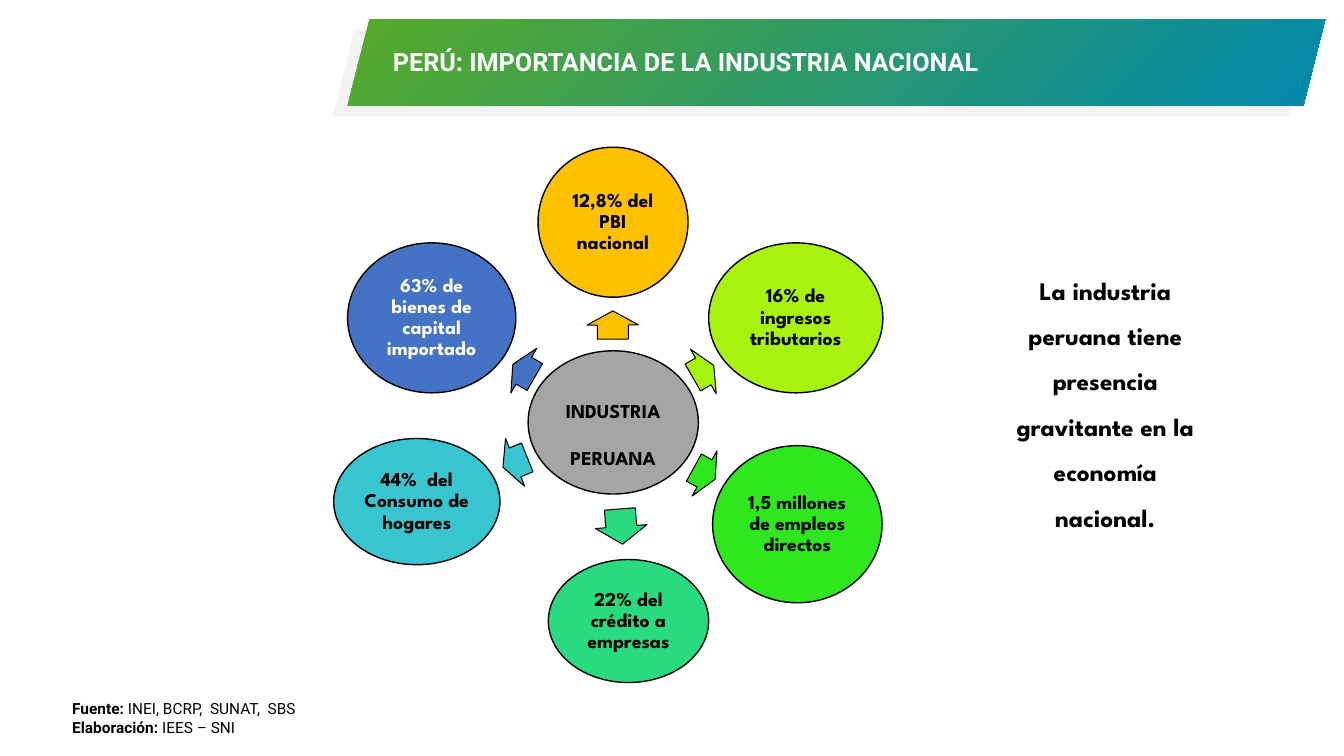
from pptx import Presentation
from pptx.dml.color import RGBColor
from pptx.enum.shapes import MSO_SHAPE
from pptx.enum.text import MSO_ANCHOR, MSO_AUTO_SIZE, PP_ALIGN
from pptx.util import Cm, Pt

OVAL, ARROW, SLANT = MSO_SHAPE.OVAL, MSO_SHAPE.RIGHT_ARROW, MSO_SHAPE.PARALLELOGRAM
TOP, MIDDLE = MSO_ANCHOR.TOP, MSO_ANCHOR.MIDDLE
LEFT, CENTER = PP_ALIGN.LEFT, PP_ALIGN.CENTER
NO_FIT = MSO_AUTO_SIZE.NONE

HEAD, BODY = "Roboto", "League Spartan"
COLORS = {
    "black": "000000", "white": "FFFFFF", "shade": "F3F3F3",
    "leaf": "58AA29", "sea": "0087AD", "gray": "A5A5A5",
    "gold": "FFC000", "lime": "A7F30E", "green": "2EE71C",
    "mint": "29DB80", "teal": "37C6CF", "blue": "4472C4",
}

# Text, fill, ink, circle (left, top, width, height), arrow (left, top, length, angle)
FACTS = [
    ("12,8% del PBI nacional", "gold", "black",
     (13.56, 3.71, 3.78, 3.78), (15.09, 7.54, 0.71, 269.8)),
    ("16% de ingresos tributarios", "lime", "black",
     (17.86, 6.12, 4.39, 3.78), (17.42, 8.71, 0.61, 330)),
    ("1,5 millones de empleos\ndirectos", "green", "black",
     (17.96, 11.23, 4.27, 3.96), (17.45, 11.28, 0.61, 28.8)),
    ("22% del crédito a empresas", "mint", "black",
     (13.82, 14.1, 4.04, 3.1), (15.21, 12.62, 0.89, 85.6)),
    ("44%  del Consumo de hogares", "teal", "black",
     (8.41, 11.05, 4.19, 3.18), (12.65, 11, 0.66, 158.2)),
    ("63% de bienes de capital importado", "blue", "white",
     (8.76, 6.12, 4.24, 3.78), (12.88, 8.69, 0.64, 210)),
]
SOURCES = [("Fuente: ", "INEI, BCRP,  SUNAT,  SBS"), ("Elaboración: ", "IEES – SNI")]


def rgb(name):
    return RGBColor.from_string(COLORS[name])


def add_form(slide, kind, box, fill, line=0):
    form = slide.shapes.add_shape(kind, *map(Cm, box))
    form.shadow.inherit = False
    form.fill.solid()
    form.fill.fore_color.rgb = rgb(fill)
    if line:
        form.line.color.rgb = rgb("black")
        form.line.width = Pt(line)
    else:
        form.line.fill.background()
    return form


def set_frame(frame, inset, anchor):
    frame.word_wrap = True
    frame.auto_size = NO_FIT
    frame.vertical_anchor = anchor
    frame.margin_left = frame.margin_right = Cm(inset)
    frame.margin_top = frame.margin_bottom = Cm(inset)


def set_para(para, font, size, ink="black", bold=True, align=CENTER, space=1.0):
    para.alignment = align
    para.line_spacing = space
    para.font.name = font
    para.font.size = Pt(size)
    para.font.bold = bold
    para.font.color.rgb = rgb(ink)


def add_circle(slide, text, fill, ink, box, space=0.9):
    frame = add_form(slide, OVAL, box, fill, 1).text_frame
    set_frame(frame, 0.05, MIDDLE)
    frame.text = text
    for para in frame.paragraphs:
        set_para(para, BODY, 14, ink, space=space)


def add_arrow(slide, fill, left, top, length, angle):
    arrow = add_form(slide, ARROW, (left, top, length, 1.3), fill, 0.75)
    arrow.adjustments[0] = 0.6
    arrow.adjustments[1] = 0.5
    arrow.rotation = angle


def add_band(slide, left, top, fill):
    band = add_form(slide, SLANT, (left, top, 24.64, 2.18), fill)
    band.adjustments[0] = 0.253
    return band


def add_frame(slide, box, inset):
    frame = slide.shapes.add_textbox(*map(Cm, box)).text_frame
    set_frame(frame, inset, TOP)
    return frame


def add_note(slide):
    frame = add_frame(slide, (25.3, 6.55, 5.11, 6.93), 0)
    frame.text = "La industria peruana tiene presencia gravitante en la economía nacional."
    set_para(frame.paragraphs[0], BODY, 18, space=1.5)


def add_sources(slide):
    frame = add_frame(slide, (1.52, 17.32, 12.32, 0.94), 0.3)
    frame.text = "\n".join(label for label, _ in SOURCES)
    for para, (_, names) in zip(frame.paragraphs, SOURCES):
        set_para(para, HEAD, 11, bold=False, align=LEFT)
        para.runs[0].font.bold = True
        para.add_run().text = names


def add_header(slide):
    add_band(slide, 8.38, 0.76, "shade")
    fill = add_band(slide, 8.76, 0.48, "leaf").fill
    fill.gradient()
    fill.gradient_angle = 315
    for stop, place, name in zip(fill.gradient_stops, (0, 1), ("leaf", "sea")):
        stop.position = place
        stop.color.rgb = rgb(name)

    # The title lies in front of its bands
    title = slide.shapes.title
    title.element.getparent().append(title.element)
    title.left, title.top, title.width, title.height = map(Cm, (9.65, 1.04, 23.37, 1.02))
    frame = title.text_frame
    set_frame(frame, 0.13, TOP)
    frame.margin_left = Cm(0.25)
    frame.text = "PERÚ: IMPORTANCIA DE LA INDUSTRIA NACIONAL"
    set_para(frame.paragraphs[0], HEAD, 18, "white", align=LEFT)


def main():
    deck = Presentation()
    deck.slide_width, deck.slide_height = Cm(33.87), Cm(19.05)
    slide = deck.slides.add_slide(deck.slide_layouts[5])

    # Hub with its ring of facts
    add_circle(slide, "INDUSTRIA PERUANA", "gray", "black", (13.31, 8.84, 4.29, 3.61), 2.0)
    for text, fill, ink, box, arrow in FACTS:
        add_arrow(slide, fill, *arrow)
        add_circle(slide, text, fill, ink, box)

    # Side note, sources and header
    add_note(slide)
    add_sources(slide)
    add_header(slide)
    deck.save("out.pptx")


if __name__ == "__main__":
    main()
